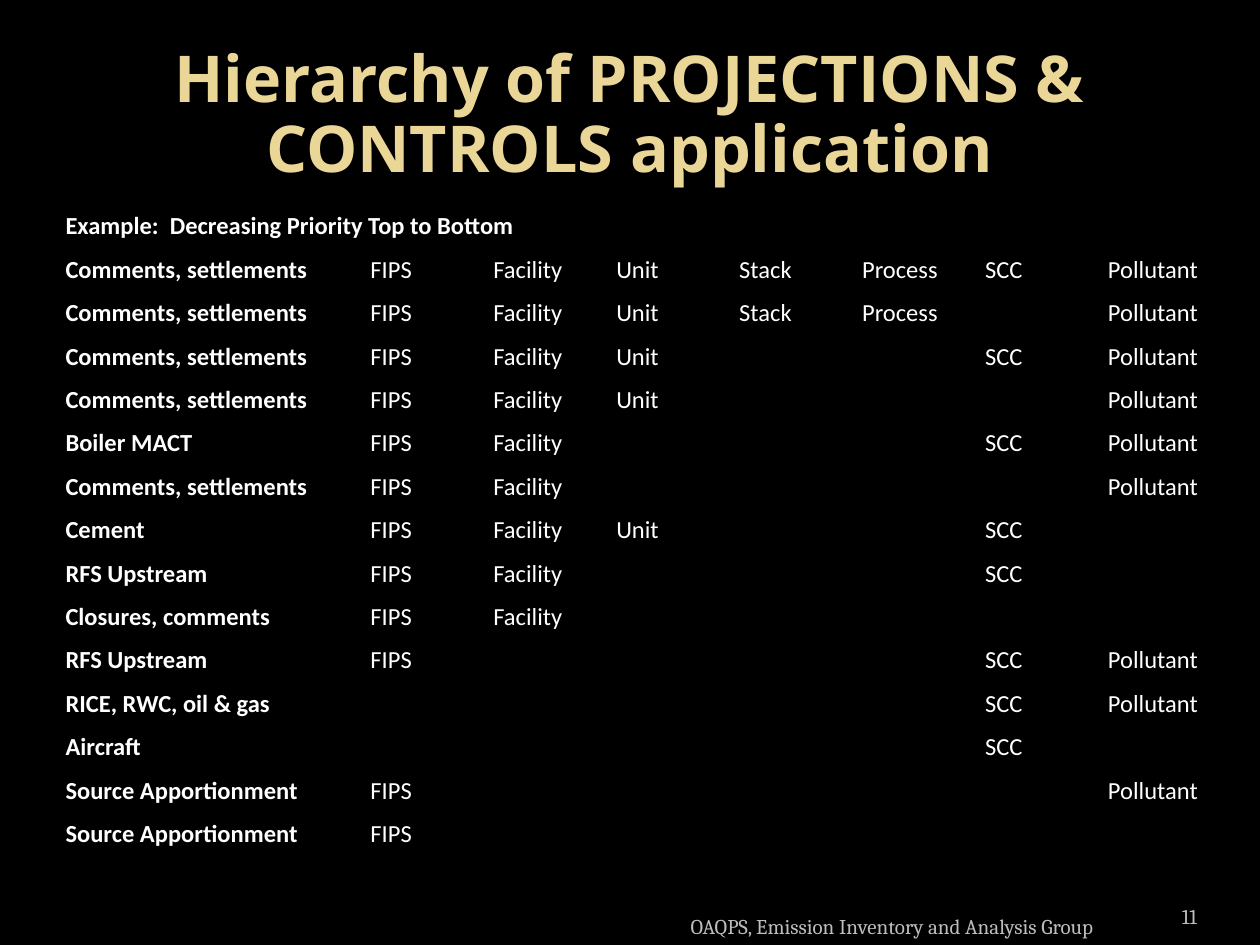
from lxml import etree
from pptx import Presentation
from pptx import util as u
from pptx.dml.color import RGBColor
from pptx.enum import text
from pptx.oxml.ns import qn

BLACK = RGBColor(0x00, 0x00, 0x00)
WHITE = RGBColor(0xFF, 0xFF, 0xFF)
GOLD = RGBColor(0xEA, 0xD6, 0x96)
GREY = RGBColor(0xBD, 0xBD, 0xBD)

TITLE = "Hierarchy of PROJECTIONS & CONTROLS application"
FOOTER = "OAQPS, Emission Inventory and Analysis Group"
SLIDE_NUMBER = "11"
HEADING = "Example:\u00a0 Decreasing Priority Top to Bottom".replace("\u00a0", " ")
KEYS = ["FIPS", "Facility", "Unit", "Stack", "Process", "SCC", "Pollutant"]
# Each control programme with the keys it is matched on, highest priority first
PRIORITIES = [
    ("Comments, settlements", "FIPS Facility Unit Stack Process SCC Pollutant"),
    ("Comments, settlements", "FIPS Facility Unit Stack Process Pollutant"),
    ("Comments, settlements", "FIPS Facility Unit SCC Pollutant"),
    ("Comments, settlements", "FIPS Facility Unit Pollutant"),
    ("Boiler MACT", "FIPS Facility SCC Pollutant"),
    ("Comments, settlements", "FIPS Facility Pollutant"),
    ("Cement", "FIPS Facility Unit SCC"),
    ("RFS Upstream", "FIPS Facility SCC"),
    ("Closures, comments", "FIPS Facility"),
    ("RFS Upstream", "FIPS SCC Pollutant"),
    ("RICE, RWC, oil & gas", "SCC Pollutant"),
    ("Aircraft", "SCC"),
    ("Source Apportionment", "FIPS Pollutant"),
    ("Source Apportionment", "FIPS"),
]

TABLE_BOX = (0.42, 1.67, 9.25, 5.17)
NAME_WIDTH = 2.42
CELL_SIZE = 14


def inches(box):
    return [u.Inches(length) for length in box]


def format_runs(paragraph, font_name, size, color, bold=False):
    for run in paragraph.runs:
        run.font.name = font_name
        run.font.size = u.Pt(size)
        run.font.color.rgb = color
        run.font.bold = bold


def add_border(cell):
    """Draw a thin black line on all four sides; lines must precede the fill."""
    properties = cell._tc.get_or_add_tcPr()
    for index, side in enumerate(("lnL", "lnR", "lnT", "lnB")):
        line = etree.Element(qn(f"a:{side}"), w=str(u.Pt(0.5)))
        fill = etree.SubElement(line, qn("a:solidFill"))
        etree.SubElement(fill, qn("a:srgbClr"), val=str(BLACK))
        properties.insert(index, line)


def fill_cell(cell, words, bold):
    cell.margin_left = cell.margin_bottom = u.Inches(0.1)
    cell.margin_top = cell.margin_right = u.Inches(0.01)
    cell.vertical_anchor = text.MSO_ANCHOR.BOTTOM
    cell.fill.background()
    add_border(cell)
    paragraph = cell.text_frame.paragraphs[0]
    if words:
        paragraph.text = words
        format_runs(paragraph, "Calibri", CELL_SIZE, WHITE, bold)
    else:  # keeps empty cells from stretching the row
        etree.SubElement(paragraph._p, qn("a:endParaRPr"), sz=str(CELL_SIZE * 100))


def add_title(slide):
    title = slide.shapes.title
    title.left, title.top, title.width, title.height = inches((0.5, 0.3, 9, 1.25))
    frame = title.text_frame
    frame.text = TITLE
    frame.auto_size = text.MSO_AUTO_SIZE.NONE
    frame.vertical_anchor = text.MSO_ANCHOR.MIDDLE
    paragraph = frame.paragraphs[0]
    paragraph.alignment = text.PP_ALIGN.CENTER
    paragraph.line_spacing = 0.9
    format_runs(paragraph, "Open Sans", 36.9, GOLD, bold=True)


def add_footer_text(slide, words, box, alignment, side_margin):
    frame = slide.shapes.add_textbox(*inches(box)).text_frame
    frame.word_wrap = True
    frame.vertical_anchor = text.MSO_ANCHOR.BOTTOM
    frame.margin_left = frame.margin_right = u.Inches(side_margin)
    frame.text = words
    frame.paragraphs[0].alignment = alignment
    format_runs(frame.paragraphs[0], "Cambria", 12, GREY)


def add_priority_table(slide):
    rows = [[HEADING] + [""] * len(KEYS)]
    for name, used in PRIORITIES:
        rows.append([name] + [key if key in used.split() else "" for key in KEYS])
    frame = slide.shapes.add_table(len(rows), len(rows[0]), *inches(TABLE_BOX))
    table = frame.table
    table.first_row = table.horz_banding = False
    key_width = (TABLE_BOX[2] - NAME_WIDTH) / len(KEYS)
    for index, column in enumerate(table.columns):
        column.width = u.Inches(key_width if index else NAME_WIDTH)
    for row, values in zip(table.rows, rows):
        row.height = u.Inches(TABLE_BOX[3] / len(rows))
        for index, (cell, words) in enumerate(zip(row.cells, values)):
            fill_cell(cell, words, bold=index == 0)
    table.cell(0, 0).merge(table.cell(0, len(KEYS)))


def main():
    presentation = Presentation()
    presentation.slide_width, presentation.slide_height = inches((10, 7.5))
    slide = presentation.slides.add_slide(presentation.slide_layouts[5])
    slide.background.fill.solid()
    slide.background.fill.fore_color.rgb = BLACK
    add_title(slide)
    add_footer_text(slide, FOOTER, (5.08, 7.1, 4, 0.4), text.PP_ALIGN.CENTER, 0.1)
    add_footer_text(slide, SLIDE_NUMBER, (8.67, 7.02, 0.83, 0.4), text.PP_ALIGN.RIGHT, 0)
    add_priority_table(slide)
    presentation.save("out.pptx")


if __name__ == "__main__":
    main()
